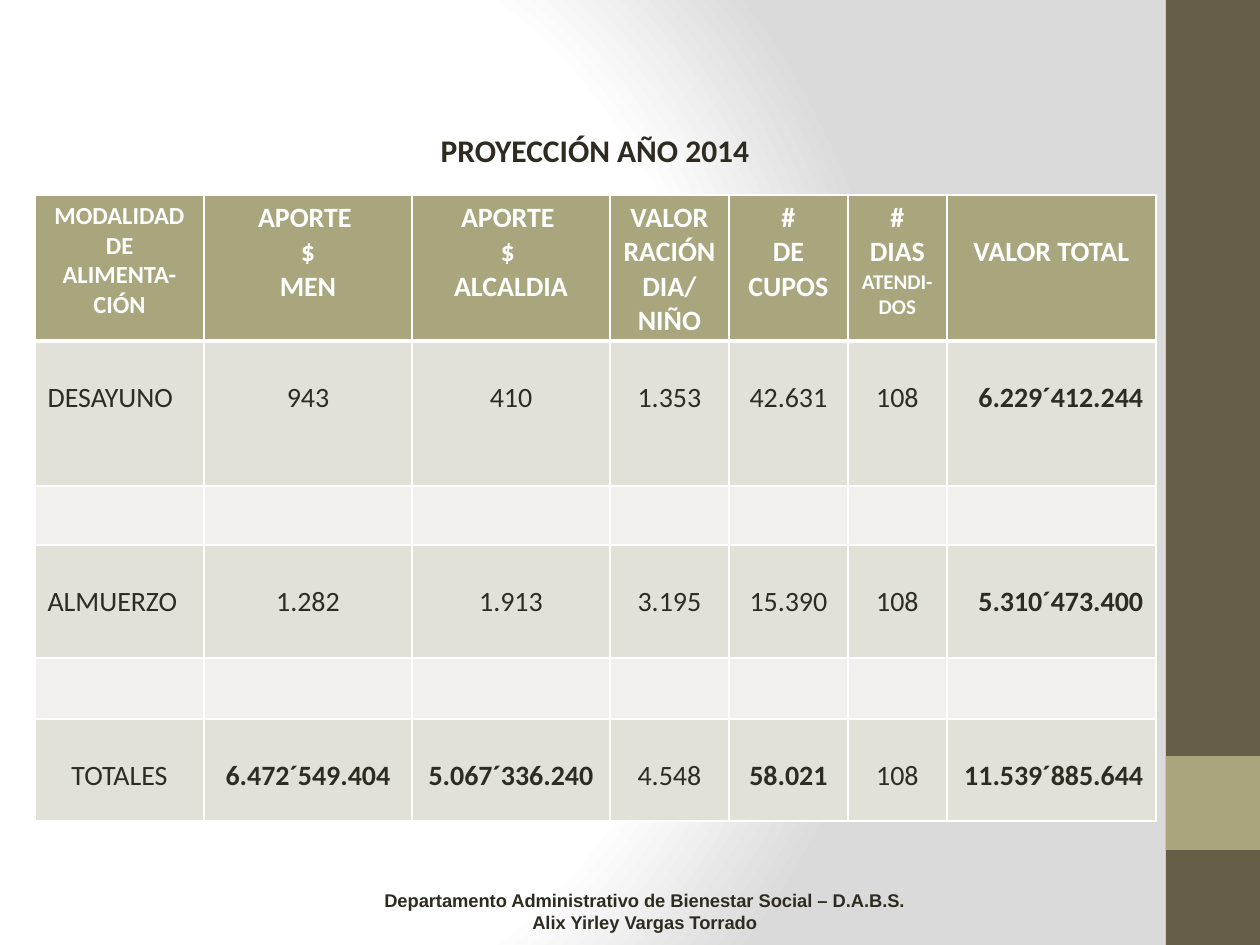
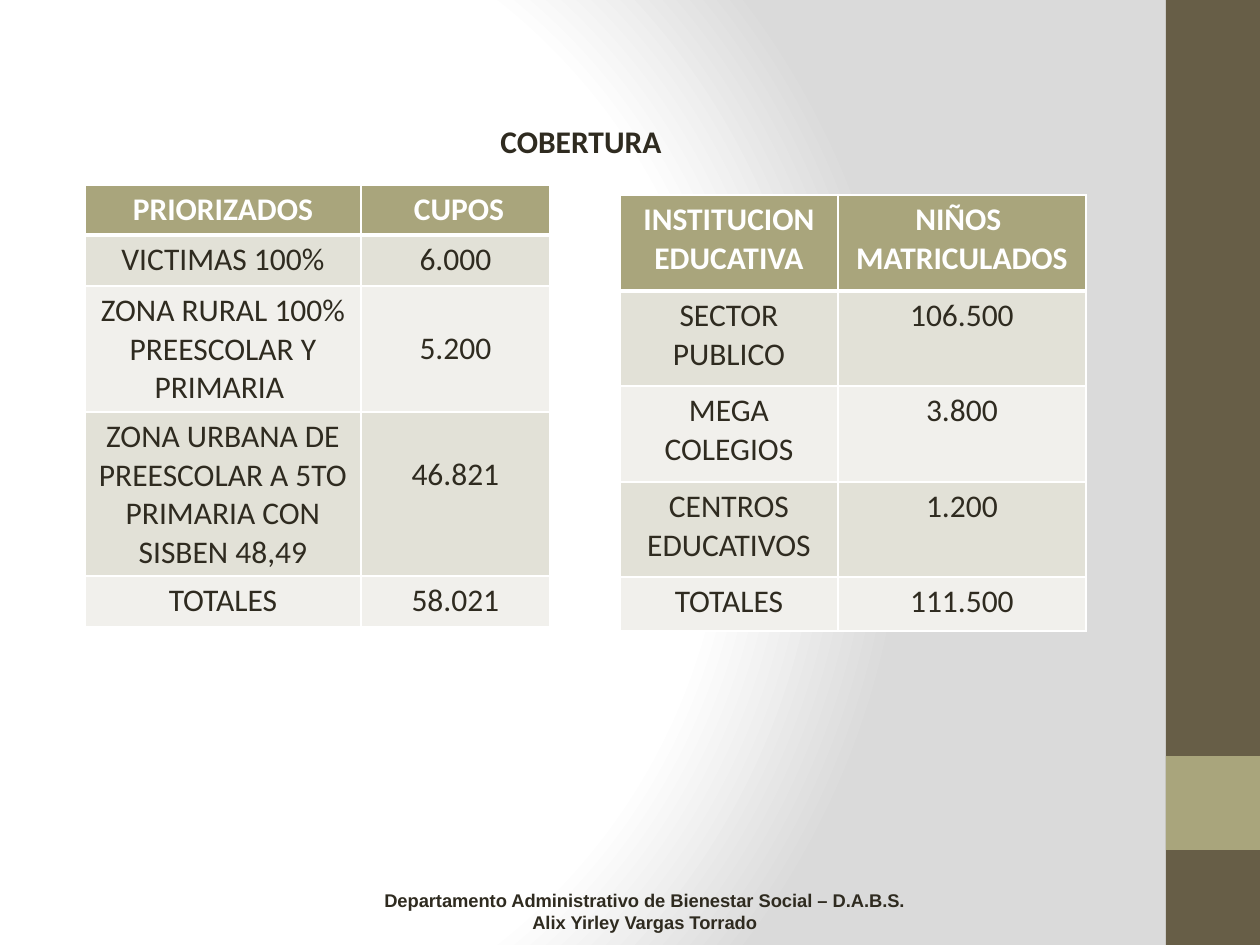
from dataclasses import dataclass

from pptx import Presentation
from pptx.dml.color import RGBColor
from pptx.enum.shapes import MSO_SHAPE
from pptx.enum.text import MSO_ANCHOR, MSO_AUTO_SIZE, PP_ALIGN
from pptx.oxml import parse_xml
from pptx.oxml.ns import nsdecls, qn
from pptx.util import Pt

EMU_PER_PX = 914400 / 126
COLORS = {
    "ink": "2F2B20",
    "white": "FFFFFF",
    "shade": "DADADA",
    "band": "675E47",
    "accent": "A9A57C",
    "row_dark": "E2E1D7",
    "row_light": "F1F0EC",
}
TITLE_FORMAT = {"name": "Calibri", "size": Pt(18), "bold": True}
FOOTER_FORMAT = {"name": "Arial", "size": Pt(10.5), "bold": True}
FOOTER_LINES = (
    "Departamento Administrativo de Bienestar Social – D.A.B.S.\n"
    "Alix Yirley Vargas Torrado"
)
CELL_INSET = 6
BLANK_LINE = {16: 34, 18: 38}


@dataclass
class Entry:
    text: str = ""
    size: int = 16
    bold: bool = False
    align: PP_ALIGN = PP_ALIGN.CENTER
    lowered: bool = False
    small_ending: str = ""


def px(length):
    return round(length * EMU_PER_PX)


def box(*lengths):
    return [px(length) for length in lengths]


def rgb(name):
    return RGBColor.from_string(COLORS[name])


def set_format(target, values):
    for attribute, value in values.items():
        setattr(target, attribute, value)


def set_font(font, values, color):
    set_format(font, values)
    font.color.rgb = rgb(color)


def write_text(frame, text, font_format, color, align=PP_ALIGN.CENTER):
    frame.text = text
    for paragraph in frame.paragraphs:
        paragraph.alignment = align
        for run in paragraph.runs:
            set_font(run.font, font_format, color)


def set_background(master):
    master.background.fill.solid()
    solid = master.element.find(".//" + qn("p:bgPr")).find(qn("a:solidFill"))
    stops = "".join(
        f'<a:gs pos="{position * 1000}"><a:srgbClr val="{COLORS[color]}"/></a:gs>'
        for position, color in ((0, "white"), (75, "white"), (100, "shade"))
    )
    gradient = parse_xml(
        f'<a:gradFill {nsdecls("a")} rotWithShape="1"><a:gsLst>{stops}</a:gsLst>'
        '<a:path path="circle">'
        '<a:fillToRect l="20000" t="50000" r="100000" b="50000"/>'
        "</a:path></a:gradFill>"
    )
    solid.getparent().replace(solid, gradient)


def add_band(slide, top, height, color):
    band = slide.shapes.add_shape(MSO_SHAPE.RECTANGLE, *box(1166, top, 94, height))
    band.shadow.inherit = False
    band.fill.solid()
    band.fill.fore_color.rgb = rgb(color)
    band.line.fill.background()


def add_footer(slide):
    footer = slide.shapes.add_textbox(*box(362, 883, 566, 57)).text_frame
    footer.word_wrap = True
    write_text(footer, FOOTER_LINES, FOOTER_FORMAT, "ink")


def add_page(deck, title, title_box):
    slide = deck.slides.add_slide(deck.slide_layouts.get_by_name("Title Only"))
    add_band(slide, 0, 945, "band")
    add_band(slide, 756, 94, "accent")
    add_footer(slide)
    heading = slide.shapes.title
    set_format(heading, dict(zip(("left", "top", "width", "height"), box(*title_box))))
    set_format(heading.text_frame, {
        "word_wrap": True,
        "auto_size": MSO_AUTO_SIZE.NONE,
        "vertical_anchor": MSO_ANCHOR.TOP,
    })
    write_text(heading.text_frame, title, TITLE_FORMAT, "ink")
    return slide


def set_borders(cell, row_index):
    widths = {
        "lnL": 1,
        "lnR": 1,
        "lnT": 3 if row_index == 1 else 1,
        "lnB": 3 if row_index == 0 else 1,
    }
    properties = cell._tc.get_or_add_tcPr()
    for side, width in widths.items():
        properties.append(parse_xml(
            f'<a:{side} {nsdecls("a")} w="{Pt(width)}"><a:solidFill>'
            f'<a:srgbClr val="{COLORS["white"]}"/></a:solidFill></a:{side}>'
        ))


def fill_cell(cell, entry, row_index):
    is_header = row_index == 0
    color = "white" if is_header else "ink"
    font_format = {
        "name": "Calibri",
        "size": Pt(entry.size),
        "bold": entry.bold or is_header,
    }
    set_borders(cell, row_index)
    cell.fill.solid()
    body_color = "row_dark" if row_index % 2 else "row_light"
    cell.fill.fore_color.rgb = rgb("accent" if is_header else body_color)
    lowering = BLANK_LINE[entry.size] if entry.lowered else 0
    set_format(cell, {
        "margin_top": px(CELL_INSET + lowering),
        "margin_bottom": 0,
        "vertical_anchor": MSO_ANCHOR.TOP,
    })
    write_text(cell.text_frame, entry.text, font_format, color, entry.align)
    if entry.small_ending:
        ending = cell.text_frame.paragraphs[-1].add_run()
        ending.text = entry.small_ending
        set_font(ending.font, {**font_format, "size": Pt(12)}, color)


def add_grid(slide, left, top, widths, heights, rows):
    table = slide.shapes.add_table(
        len(heights), len(widths), *box(left, top, sum(widths), sum(heights))
    ).table
    set_format(table, {"first_row": False, "horz_banding": False})
    for column, width in zip(table.columns, widths):
        column.width = px(width)
    for row, height in zip(table.rows, heights):
        row.height = px(height)
    for row_index, entries in enumerate(rows):
        for column_index, entry in enumerate(entries):
            fill_cell(table.cell(row_index, column_index), entry, row_index)


def meal_row(texts, bold_columns=(6,), label_align=PP_ALIGN.LEFT):
    aligns = [label_align] + [PP_ALIGN.CENTER] * 5 + [PP_ALIGN.RIGHT]
    return [
        Entry(text, bold=column in bold_columns, align=align, lowered=True)
        for column, (text, align) in enumerate(zip(texts, aligns))
    ]


def coverage_rows(texts, lowered_rows=()):
    return [
        [Entry(label, 18), Entry(count, 18, lowered=index in lowered_rows)]
        for index, (label, count) in enumerate(texts)
    ]


def add_projection(deck):
    slide = add_page(deck, "PROYECCIÓN AÑO 2014", (233, 125, 724, 50))
    header = [
        Entry("MODALIDAD\nDE ALIMENTA-\nCIÓN", 14),
        Entry("APORTE \n$\nMEN"),
        Entry("APORTE \n$ \nALCALDIA"),
        Entry("VALOR RACIÓN DIA/\nNIÑO"),
        Entry("#\nDE\nCUPOS"),
        Entry("#\nDIAS ", small_ending="ATENDI-DOS"),
        Entry("VALOR TOTAL", lowered=True),
    ]
    spacer = [Entry()] * len(header)
    breakfast = ("DESAYUNO", "943", "410", "1.353", "42.631", "108", "6.229´412.244")
    lunch = ("ALMUERZO", "1.282", "1.913", "3.195", "15.390", "108", "5.310´473.400")
    totals = ("TOTALES", "6.472´549.404", "5.067´336.240", "4.548", "58.021", "108",
              "11.539´885.644")
    add_grid(
        slide, 35, 195,
        (169, 208, 198, 119, 119, 99, 209),
        (146, 145, 59, 113, 61, 102),
        [header, meal_row(breakfast), spacer, meal_row(lunch), spacer,
         meal_row(totals, (1, 2, 4, 6), PP_ALIGN.CENTER)],
    )


def add_coverage(deck):
    slide = add_page(deck, "COBERTURA", (353, 116, 456, 50))
    priorities = [
        ("PRIORIZADOS", " CUPOS"),
        ("VICTIMAS 100%", "6.000"),
        ("ZONA RURAL 100% PREESCOLAR Y PRIMARIA ", "5.200"),
        ("ZONA URBANA DE PREESCOLAR A 5TO PRIMARIA CON SISBEN 48,49", "46.821"),
        ("TOTALES", "58.021"),
    ]
    enrolment = [
        ("INSTITUCION\nEDUCATIVA", "NIÑOS \nMATRICULADOS"),
        ("SECTOR\nPUBLICO", "106.500"),
        ("MEGA\nCOLEGIOS", "3.800"),
        ("CENTROS\nEDUCATIVOS", "1.200"),
        ("TOTALES", "111.500"),
    ]
    add_grid(slide, 85, 185, (276, 189), (50, 51, 126, 164, 51),
             coverage_rows(priorities, (2, 3)))
    add_grid(slide, 620, 195, (218, 248), (96, 95, 96, 95, 54),
             coverage_rows(enrolment))


def main():
    deck = Presentation()
    set_format(deck, {"slide_width": px(1260), "slide_height": px(945)})
    set_background(deck.slide_master)
    add_projection(deck)
    add_coverage(deck)
    deck.save("out.pptx")


if __name__ == "__main__":
    main()
